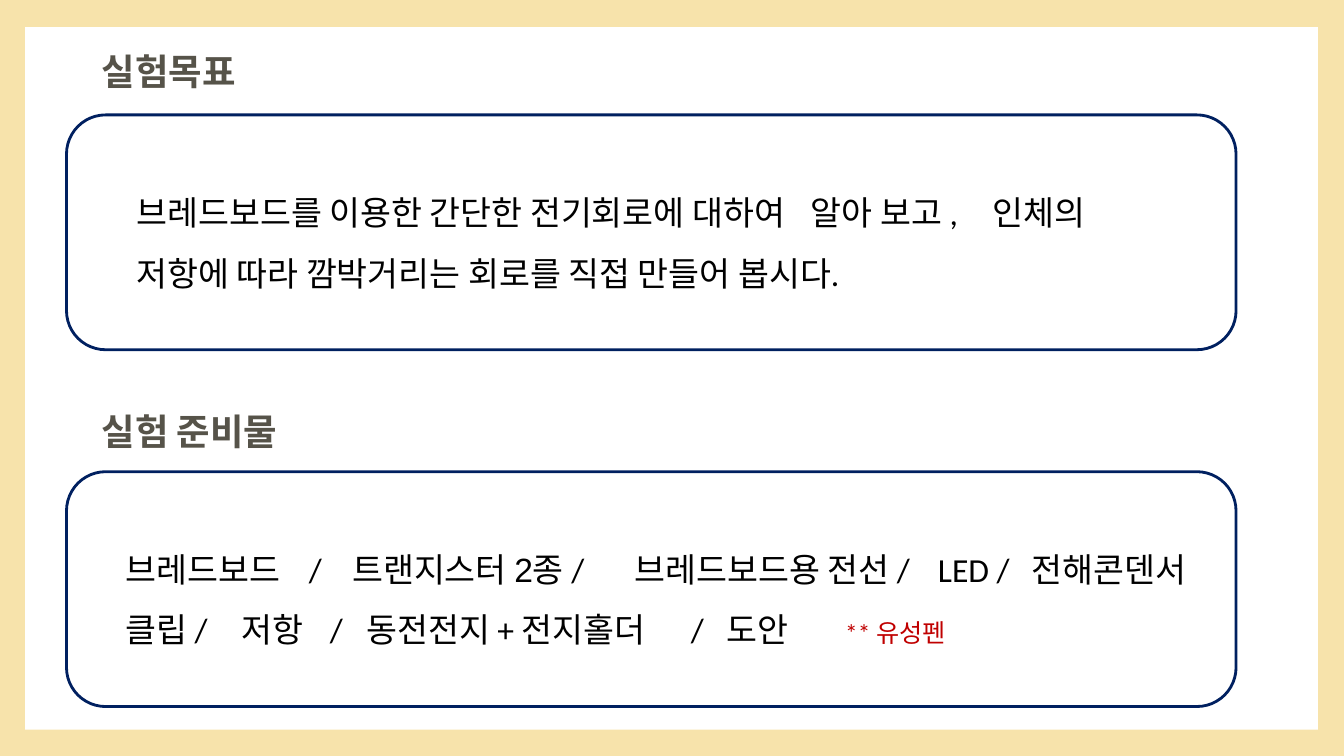
from lxml import etree
from pptx import Presentation
from pptx.dml.color import RGBColor
from pptx.enum.shapes import MSO_SHAPE
from pptx.enum.text import MSO_ANCHOR, MSO_AUTO_SIZE, PP_ALIGN
from pptx.oxml.ns import qn
from pptx.util import Pt

PX = 9144  # 100 px to the inch
TITLE_ONLY = 5
RECTANGLE, ROUNDED = MSO_SHAPE.RECTANGLE, MSO_SHAPE.ROUNDED_RECTANGLE
TOP, MIDDLE = MSO_ANCHOR.TOP, MSO_ANCHOR.MIDDLE
LEFT = PP_ALIGN.LEFT
NO_FIT = MSO_AUTO_SIZE.NONE

CREAM, WHITE, BLACK = "F7E3AB", "FFFFFF", "000000"
NAVY, OLIVE, RED = "002060", "565349", "C00000"

GOAL_LINES = [
    (["브레드보드를 이용한 간단한 전기회로에 대하여\t알아 보고 ,\t인체의"], [669, 849]),
    (["저항에 따라 깜박거리는 회로를 직접 만들어 봅시다."], []),
]
MATERIAL_LINES = [
    (["브레드보드\t/\t트랜지스터 ", ("2", {"font": "Arial"}),
      "종 /\t브레드보드용 전선 /\tLED /\t전해콘덴서"],
     [182, 225, 505, 806, 899]),
    (["클립 /\t저항\t/\t동전전지 + 전지홀더\t/\t도안\t",
      ("** 유성펜", {"size": 18, "color": RED})],
     [115, 203, 239, 561, 596, 714]),
]


def color_of(hex_string):
    return RGBColor.from_string(hex_string)


def add_text(paragraph, text, size=24, color=BLACK, bold=False, font="Calibri"):
    run = paragraph.add_run()
    run.text = text
    run.font.size = Pt(size)
    run.font.name = font
    run.font.bold = bold
    run.font.color.rgb = color_of(color)


def set_tab_stops(paragraph, stops):
    """Place left tab stops, in px from the start of the text."""
    tab_list = etree.SubElement(paragraph._p.get_or_add_pPr(), qn("a:tabLst"))
    for stop in stops:
        etree.SubElement(tab_list, qn("a:tab"), pos=str(stop * PX), algn="l")


def add_panel(slide, kind, left, top, width, height, line=None):
    shape = slide.shapes.add_shape(kind, left * PX, top * PX, width * PX, height * PX)
    shape.shadow.inherit = False
    shape.fill.solid()
    shape.fill.fore_color.rgb = color_of(WHITE)
    if line:
        shape.line.color.rgb = color_of(line)
        shape.line.width = Pt(2)
    else:
        shape.line.fill.background()
    return shape


def format_heading(shape, text, top, width):
    shape.left, shape.top = 91 * PX, top * PX
    shape.width, shape.height = width * PX, 48 * PX
    frame = shape.text_frame
    frame.word_wrap = False
    frame.auto_size = NO_FIT
    frame.vertical_anchor = TOP
    frame.margin_left = frame.margin_right = 10 * PX
    frame.margin_top = frame.margin_bottom = 10 * PX
    paragraph = frame.paragraphs[0]
    paragraph.alignment = LEFT
    add_text(paragraph, text, size=26, color=OLIVE, bold=True)


def add_rounded_box(slide, top, indent, lines):
    """Add an outlined box; each line is its runs and its tab stops."""
    box = add_panel(slide, ROUNDED, 66, top, 1160, 233, line=NAVY)
    frame = box.text_frame
    frame.word_wrap = True
    frame.vertical_anchor = MIDDLE
    frame.margin_left = indent * PX
    for index, (runs, stops) in enumerate(lines):
        paragraph = frame.add_paragraph() if index else frame.paragraphs[0]
        paragraph.alignment = LEFT
        paragraph.line_spacing = 1.5
        if stops:
            set_tab_stops(paragraph, stops)
        for run in runs:
            text, text_format = (run, {}) if isinstance(run, str) else run
            add_text(paragraph, text, **text_format)


def main():
    presentation = Presentation()
    presentation.slide_width, presentation.slide_height = 1333 * PX, 750 * PX
    slide = presentation.slides.add_slide(presentation.slide_layouts[TITLE_ONLY])
    slide.background.fill.solid()
    slide.background.fill.fore_color.rgb = color_of(CREAM)

    page = add_panel(slide, RECTANGLE, 25, 27, 1282, 697)
    title = slide.shapes.title
    page._element.addnext(title._element)  # bring the title in front of the page
    format_heading(title, "실험목표", top=39, width=196)
    add_rounded_box(slide, 114, 58, GOAL_LINES)

    materials_heading = slide.shapes.add_textbox(0, 0, PX, PX)
    format_heading(materials_heading, "실험 준비물", top=396, width=230)
    add_rounded_box(slide, 468, 47, MATERIAL_LINES)

    presentation.save("out.pptx")


if __name__ == "__main__":
    main()
